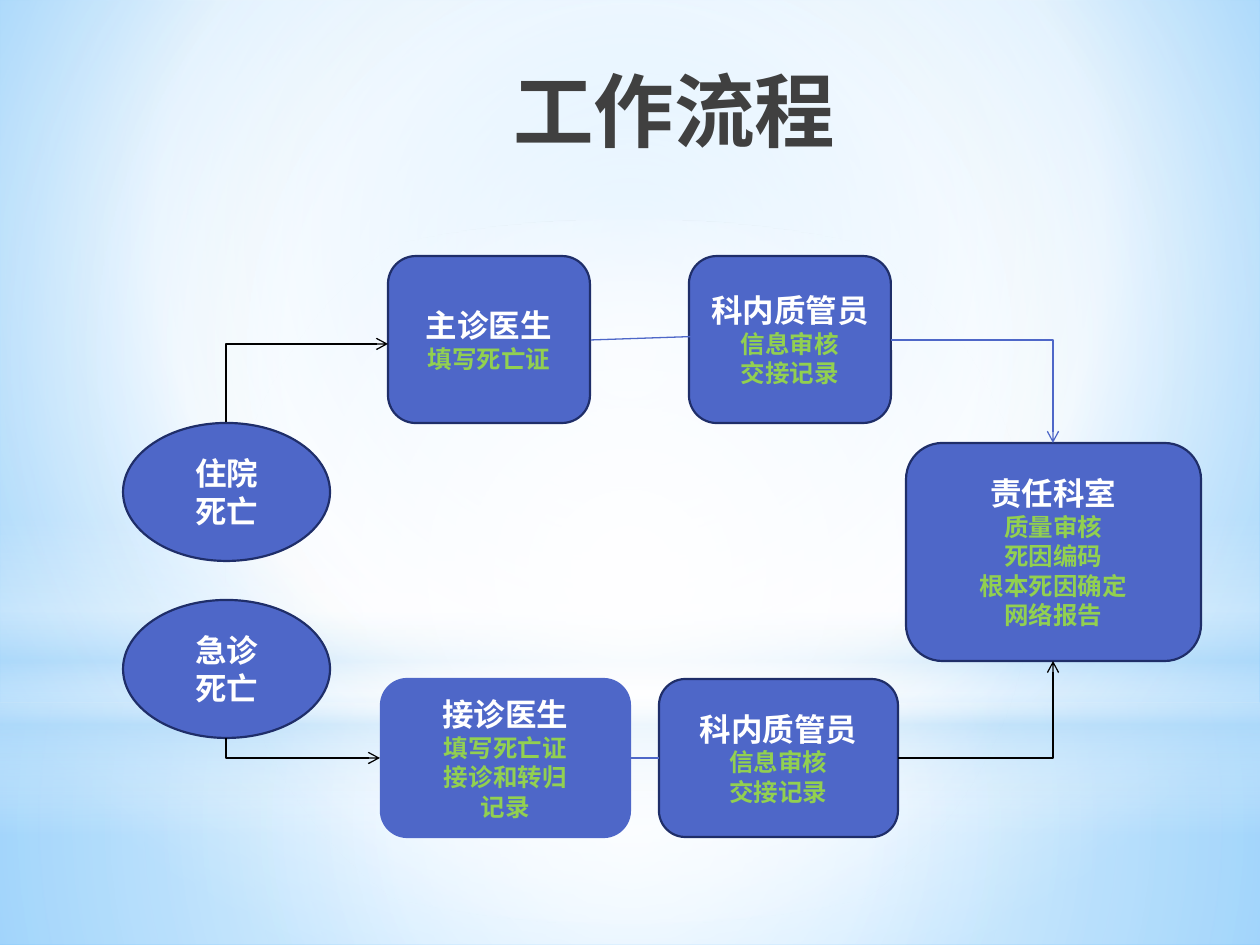
import pptx
import pptx.dml.color
import pptx.enum.shapes
import pptx.enum.text
import pptx.oxml
import pptx.oxml.ns
import pptx.util
from lxml import etree

KIND = pptx.enum.shapes.MSO_SHAPE
LINK = pptx.enum.shapes.MSO_CONNECTOR
MID = pptx.enum.text.MSO_ANCHOR.MIDDLE
TOP = pptx.enum.text.MSO_ANCHOR.TOP
QN = pptx.oxml.ns.qn
HUES = {
    "white": "FFFFFF", "sky": "9ED5FF", "azure": "5BB9FF", "mist": "B4DCFA",
    "blue": "4E67C8", "navy": "1F2E69", "lime": "92D050", "grey": "404040",
    "black": "000000",
}


def px(num):
    return pptx.util.Inches(num / 126)


def tint(name):
    return pptx.dml.color.RGBColor.from_string(HUES[name])


def write(frame, lines, font="Karla", anchor=MID):
    frame.word_wrap = True
    frame.vertical_anchor = anchor
    for i, (words, size, hue) in enumerate(lines):
        para = frame.paragraphs[0] if i == 0 else frame.add_paragraph()
        para.alignment = pptx.enum.text.PP_ALIGN.CENTER
        run = para.add_run()
        run.text = words
        run.font.size = pptx.util.Pt(size)
        run.font.bold = True
        run.font.name = font
        run.font.color.rgb = tint(hue)
        east = etree.SubElement(run.font._element, QN("a:ea"))
        east.set("typeface", font)


def blend(part, fill, stops, focus=None):
    fill.solid()
    fill.fore_color.rgb = tint("white")
    old = part.xpath(".//a:solidFill")[0]
    grad = etree.Element(QN("a:gradFill"), rotWithShape="1")
    marks = etree.SubElement(grad, QN("a:gsLst"))
    for spot, hue, alpha in stops:
        mark = etree.SubElement(marks, QN("a:gs"), pos=str(spot * 1000))
        tone = etree.SubElement(mark, QN("a:srgbClr"), val=HUES[hue])
        if alpha < 100:
            etree.SubElement(tone, QN("a:alpha"), val=str(alpha * 1000))
    if focus:
        path = etree.SubElement(grad, QN("a:path"), path="circle")
        rect = etree.SubElement(path, QN("a:fillToRect"))
        for side, share in zip("ltrb", focus):
            rect.set(side, str(share * 1000))
    else:
        etree.SubElement(grad, QN("a:lin"), ang="5400000", scaled="0")
    old.getparent().replace(old, grad)


class Deck:
    def __init__(self):
        self.prs = pptx.Presentation()
        self.prs.slide_width, self.prs.slide_height = px(1260), px(945)
        self.slide = self.prs.slides.add_slide(self.prs.slide_layouts[5])
        self.master = self.prs.slide_master
        self.depth = 2

    def ground(self, stops, focus):
        blend(self.master.element, self.master.background.fill, stops, focus)

    def shape(self, kind, area):
        form = self.slide.shapes.add_shape(kind, *map(px, area))
        form.shadow.inherit = False
        return form

    def glow(self, kind, area, stops, focus=None):
        form = self.shape(kind, area)
        form.line.fill.background()
        blend(form.element, form.fill, stops, focus)
        self.master.shapes.element.insert(self.depth, form.element)
        self.depth += 1

    def title(self, words, area):
        form = self.slide.shapes.title
        form.left, form.top, form.width, form.height = map(px, area)
        write(form.text_frame, [(words, 46, "grey")], "Noto Sans CJK SC", TOP)

    def node(self, kind, area, heads, notes=(), edge="navy"):
        form = self.shape(kind, area)
        form.fill.solid()
        form.fill.fore_color.rgb = tint("blue")
        form.line.color.rgb = tint(edge)
        form.line.width = pptx.util.Pt(1.25)
        lines = [(word, 18, "white") for word in heads]
        lines += [(word, 14, "lime") for word in notes]
        write(form.text_frame, lines)

    def line(self, kind, ends, hue):
        wire = self.slide.shapes.add_connector(kind, *map(px, ends))
        wire.line.color.rgb = tint(hue)
        wire.line.width = pptx.util.Pt(0.75)
        etree.SubElement(wire.element.spPr, QN("a:effectLst"))
        return wire

    def bend(self, x1, y1, x2, y2, hue="black", rise=False):
        ends, turn = (x1, y1, x2, y2), 0
        if rise:
            midx, midy = (x1 + x2) // 2, (y1 + y2) // 2
            sign = 1 if y2 > y1 else -1
            half, span = abs(y2 - y1) // 2, sign * (x2 - x1) // 2
            ends = (midx + half, midy - span, midx - half, midy + span)
            turn = 270 if sign > 0 else 90
        wire = self.line(LINK.ELBOW, ends, hue)
        props = wire.element.spPr
        props.find(QN("a:prstGeom")).set("prst", "bentConnector2")
        props.find(QN("a:xfrm")).set("rot", str(turn * 60000))
        etree.SubElement(props.find(QN("a:ln")), QN("a:tailEnd"), type="arrow")


def main():
    deck = Deck()
    core = (50, 50, 50, 50)
    deck.ground([(0, "sky", 100), (60, "white", 100), (100, "azure", 100)],
                (20, 10, 20, 60))
    deck.glow(KIND.RECTANGLE, (0, 703, 1260, 242),
              [(0, "white", 91), (37, "white", 76), (100, "mist", 79)], core)
    deck.glow(KIND.RECTANGLE, (0, 0, 1260, 703),
              [(0, "white", 89), (48, "white", 62), (100, "mist", 79)], core)
    deck.glow(KIND.RECTANGLE, (0, 519, 1260, 315),
              [(0, "white", 0), (29, "white", 30), (45, "mist", 40),
               (55, "white", 26), (65, "mist", 60), (100, "white", 0)])
    deck.glow(KIND.OVAL, (0, 220, 1260, 703),
              [(0, "white", 100), (56, "white", 0)], core)

    deck.title("工作流程", (225, 55, 898, 158))
    for top, word in ((423, "住院"), (600, "急诊")):
        deck.node(KIND.OVAL, (123, top, 207, 138), [word, "死亡"])

    card = KIND.ROUNDED_RECTANGLE
    check = ["信息审核", "交接记录"]
    deck.node(card, (388, 256, 202, 167), ["主诊医生"], ["填写死亡证"])
    deck.node(card, (689, 256, 202, 167), ["科内质管员"], check)
    deck.node(card, (906, 443, 295, 218), ["责任科室"],
              ["质量审核", "死因编码", "根本死因确定", "网络报告"])
    deck.node(card, (381, 679, 249, 158), ["接诊医生"],
              ["填写死亡证", "接诊和转归", "记录"], "blue")
    deck.node(card, (659, 679, 239, 158), ["科内质管员"], check)

    deck.bend(226, 423, 388, 344, rise=True)
    deck.bend(226, 738, 381, 758, rise=True)
    deck.bend(898, 758, 1053, 661)
    deck.bend(891, 340, 1053, 443, "blue")
    deck.line(LINK.STRAIGHT, (591, 340, 738, 335), "blue")
    deck.line(LINK.STRAIGHT, (630, 758, 659, 758), "blue")
    deck.prs.save("out.pptx")


if __name__ == "__main__":
    main()
